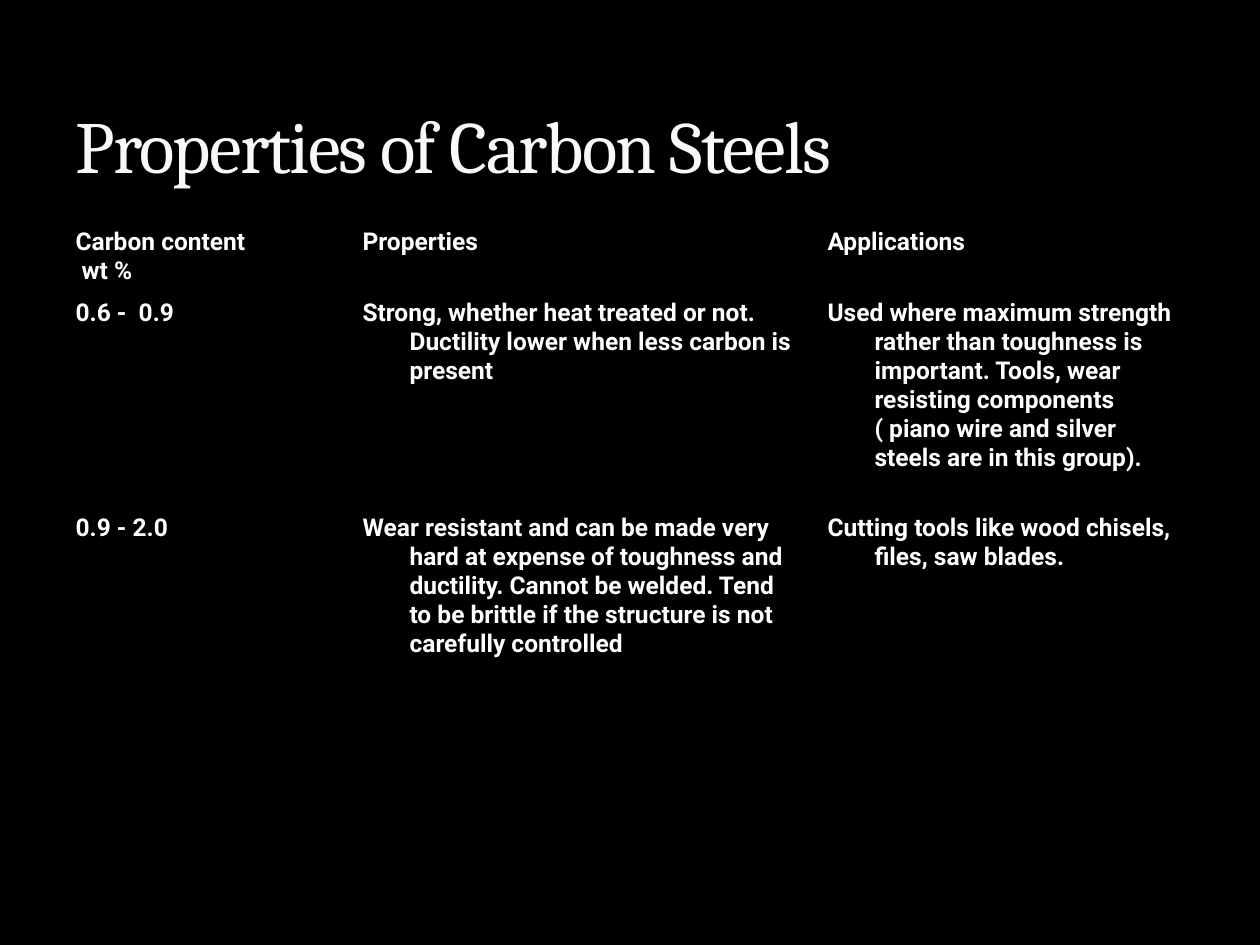
from dataclasses import dataclass

from pptx import Presentation
from pptx import util as u
from pptx.dml.color import RGBColor
from pptx.enum import text
from pptx.oxml import parse_xml
from pptx.oxml.ns import nsdecls

PX = 914400 / 126


@dataclass(frozen=True)
class Theme:
    background: str = "000000"
    border: str = "000000"
    title: str = "F9F9F9"
    title_outline: str = "3C4422"
    body: str = "FFFFFF"
    title_font: str = "Cambria"
    body_font: str = "Roboto"
    title_size: int = 42
    body_size: int = 14


@dataclass(frozen=True)
class Row:
    height: int
    cells: tuple[str, ...]


THEME = Theme()
COLUMNS = (287, 465, 381)
ROWS = (
    Row(71, ("Carbon content\n wt %", "Properties", "Applications")),
    Row(215, (
        "0.6 -  0.9",
        "Strong, whether heat treated or not. Ductility lower when less "
        "carbon is present",
        "Used where maximum strength rather than toughness is important. "
        "Tools, wear resisting components ( piano wire and silver steels "
        "are in this group).",
    )),
    Row(161, (
        "0.9 - 2.0",
        "Wear resistant and can be made very hard at expense of toughness "
        "and ductility. Cannot be welded. Tend to be brittle if the "
        "structure is not carefully controlled",
        "Cutting tools like wood chisels, files, saw blades.",
    )),
    Row(161, ("", "", "")),
)


def px(n: int) -> u.Emu:
    return u.Emu(round(n * PX))


def style(font, color: str, **values) -> None:
    for name, value in values.items():
        setattr(font, name, value)
    font.color.rgb = RGBColor.from_string(color)


def place(sp, left: int, top: int, width: int, height: int) -> None:
    box = {"left": left, "top": top, "width": width, "height": height}
    for name, value in box.items():
        setattr(sp, name, px(value))


def draw_title(sp, title: str) -> None:
    place(sp, 63, 38, 1134, 157)
    tf = sp.text_frame
    tf.word_wrap = True
    tf.auto_size = text.MSO_AUTO_SIZE.NONE
    tf.vertical_anchor = text.MSO_ANCHOR.BOTTOM
    p = tf.paragraphs[0]
    p.alignment = text.PP_ALIGN.LEFT
    r = p.add_run()
    r.text = title
    style(r.font, THEME.title, name=THEME.title_font, size=u.Pt(THEME.title_size))
    props = r._r.get_or_add_rPr()
    props.set("spc", "-100")
    props.insert(0, parse_xml(
        f'<a:ln {nsdecls("a")} w="3175"><a:solidFill>'
        f'<a:srgbClr val="{THEME.title_outline}"><a:alpha val="25000"/></a:srgbClr>'
        '</a:solidFill><a:prstDash val="solid"/></a:ln>'))


def draw_cell(cell, content: str) -> None:
    cell.fill.background()
    props = cell._tc.get_or_add_tcPr()
    for i, side in enumerate(("lnL", "lnR", "lnT", "lnB")):
        props.insert(i, parse_xml(
            f'<a:{side} {nsdecls("a")} w="12700"><a:solidFill>'
            f'<a:srgbClr val="{THEME.border}"/></a:solidFill></a:{side}>'))
    if not content:
        return
    tf = cell.text_frame
    for i, line in enumerate(content.split("\n")):
        p = tf.add_paragraph() if i else tf.paragraphs[0]
        indent = p._p.get_or_add_pPr()
        indent.set("marL", str(px(47)))
        indent.set("indent", str(-px(47)))
        r = p.add_run()
        r.text = line
        style(r.font, THEME.body, name=THEME.body_font,
              size=u.Pt(THEME.body_size), bold=True)


def draw_table(s, rows: tuple[Row, ...], left: int, top: int) -> None:
    height = sum(row.height for row in rows)
    table = s.shapes.add_table(len(rows), len(COLUMNS), px(left), px(top),
                               px(sum(COLUMNS)), px(height)).table
    table.first_row = table.horz_banding = False
    for column, width in zip(table.columns, COLUMNS):
        column.width = px(width)
    for table_row, row in zip(table.rows, rows):
        table_row.height = px(row.height)
        for cell, content in zip(table_row.cells, row.cells):
            draw_cell(cell, content)


def main() -> None:
    prs = Presentation()
    prs.slide_width, prs.slide_height = px(1260), px(945)
    s = prs.slides.add_slide(prs.slide_layouts[5])
    fill = s.background.fill
    fill.solid()
    fill.fore_color.rgb = RGBColor.from_string(THEME.background)
    draw_title(s.shapes.title, "Properties of Carbon Steels")
    draw_table(s, ROWS, 63, 221)
    prs.save("out.pptx")


if __name__ == "__main__":
    main()
